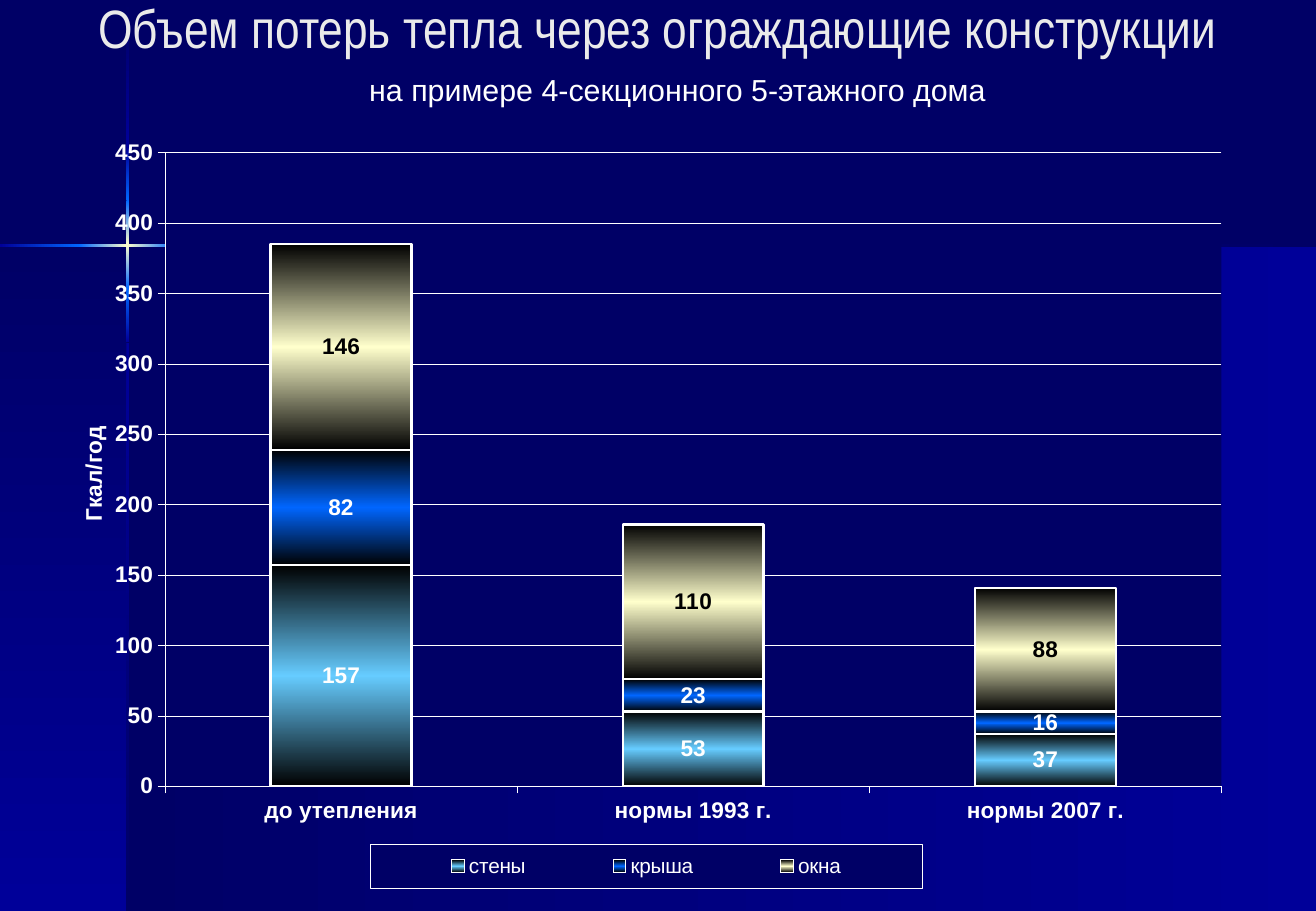
from copy import deepcopy
from lxml import etree
from pptx import Presentation, util as u
from pptx.chart import data as cd
from pptx.dml.color import RGBColor
from pptx.enum import chart as ce, shapes, text
from pptx.oxml import ns, parse_xml

theme = {
    "navy": RGBColor.from_string("000066"),
    "deep": RGBColor.from_string("000099"),
    "blue": RGBColor.from_string("0066FF"),
    "sky": RGBColor.from_string("66CCFF"),
    "cream": RGBColor.from_string("FFFFCC"),
    "white": RGBColor.from_string("FFFFFF"),
    "grey": RGBColor.from_string("EAEAEA"),
    "black": RGBColor.from_string("000000"),
    "head": u.Pt(32),
    "sub": u.Pt(18),
    "mark": u.Pt(13.4),
    "key": u.Pt(12.3),
    "thin": u.Pt(0.34),
    "edge": u.Pt(1.37),
    "sans": "Arial",
    "slim": "Arial Narrow",
}
px = u.Inches(1) // 100


def blend(fill, root, hues, angle):
    fill.gradient()
    fill.gradient_angle = angle
    stops = root.find(".//" + ns.qn("a:gsLst"))
    if len(hues) == 3:
        stops.append(deepcopy(stops[0]))
    for i, (stop, hue) in enumerate(zip(fill.gradient_stops, hues)):
        stop.position = i / (len(hues) - 1)
        stop.color.rgb = theme[hue]


def place(root, index, box):
    for old in root.findall(ns.qn("c:layout")):
        root.remove(old)
    layout = etree.Element(ns.qn("c:layout"))
    manual = etree.SubElement(layout, ns.qn("c:manualLayout"))
    if index == 0:
        etree.SubElement(manual, ns.qn("c:layoutTarget")).set("val", "inner")
    for tag in ("xMode", "yMode"):
        etree.SubElement(manual, ns.qn("c:" + tag)).set("val", "edge")
    for tag, size in zip("xywh", box):
        etree.SubElement(manual, ns.qn("c:" + tag)).set("val", str(size))
    root.insert(index, layout)


deck = Presentation()
deck.slide_width, deck.slide_height = 1083 * px, 750 * px
slide = deck.slides.add_slide(deck.slide_layouts[5])
slide.background.fill.solid()
slide.background.fill.fore_color.rgb = theme["navy"]

across, down = 0, 270
glow = ["blue", "cream", "blue"]
decor = [
    (105, 202, 978, 548, ["navy", "deep"], across),
    (0, 202, 105, 548, ["navy", "deep"], down),
    (104, 1, 2, 120, ["navy", "deep"], down),
    (104, 282, 2, 468, ["deep", "navy"], down),
    (192, 201, 891, 2, ["deep", "navy"], across),
    (104, 238, 2, 44, ["blue", "deep"], down),
    (104, 121, 2, 44, ["deep", "blue"], down),
    (104, 165, 2, 73, glow, down),
    (0, 201, 66, 2, ["deep", "blue"], across),
    (144, 201, 48, 2, ["blue", "deep"], across),
    (65, 201, 79, 2, glow, across),
]
for x, y, w, h, hues, angle in decor:
    bar = slide.shapes.add_shape(shapes.MSO_SHAPE.RECTANGLE, x * px, y * px, w * px, h * px)
    bar.shadow.inherit = False
    bar.line.fill.background()
    blend(bar.fill, bar._element, hues, angle)

title = slide.shapes.title
title._element.getparent().append(title._element)
title.left, title.top, title.width, title.height = 69 * px, 0, 945 * px, 54 * px
title.text_frame.text = "Объем потерь тепла через ограждающие конструкции"
title.text_frame.vertical_anchor = text.MSO_ANCHOR.MIDDLE
title.text_frame.auto_size = text.MSO_AUTO_SIZE.NONE
head = title.text_frame.paragraphs[0]
head.alignment = text.PP_ALIGN.CENTER
head.line_spacing = 0.8
head.font.name, head.font.size = theme["slim"], theme["head"]
head.font.color.rgb = theme["grey"]

data = cd.CategoryChartData()
data.categories = ["до утепления", "нормы 1993 г.", "нормы 2007 г."]
parts = [
    ("стены", (157, 53, 37), "sky", "white"),
    ("крыша", (82, 23, 16), "blue", "white"),
    ("окна", (146, 110, 88), "cream", "black"),
]
for name, vals, hue, ink in parts:
    data.add_series(name, vals)
chart = slide.shapes.add_chart(
    ce.XL_CHART_TYPE.COLUMN_STACKED, 38 * px, 96 * px, 978 * px, 648 * px, data
).chart
chart.has_title = False
chart.font.name, chart.font.size = theme["sans"], theme["mark"]
chart.font.color.rgb = theme["white"]

plot = chart.plots[0]
plot.gap_width, plot.overlap, plot.vary_by_categories = 150, 100, False
for series, (name, vals, hue, ink) in zip(plot.series, parts):
    blend(series.format.fill, series._element, ["black", hue, "black"], down)
    series.format.line.color.rgb = theme["white"]
    series.format.line.width = theme["edge"]
    labels = series.data_labels
    labels.show_value = True
    labels.position = ce.XL_LABEL_POSITION.CENTER
    labels.font.name, labels.font.size = theme["sans"], theme["mark"]
    labels.font.bold = True
    labels.font.color.rgb = theme[ink]

value = chart.value_axis
value.minimum_scale, value.maximum_scale, value.major_unit = 0, 450, 50
value.has_major_gridlines = True
value.has_title = True
value.axis_title.text_frame.text = "Гкал/год"
name = value.axis_title.text_frame.paragraphs[0]
value.axis_title.text_frame._txBody.bodyPr.set("rot", "-5400000")
value.axis_title.text_frame._txBody.bodyPr.set("vert", "horz")
for axis in (value, chart.category_axis):
    axis.major_tick_mark = ce.XL_TICK_MARK.OUTSIDE
    axis.minor_tick_mark = ce.XL_TICK_MARK.NONE
for font in (value.tick_labels.font, chart.category_axis.tick_labels.font, name.font):
    font.name, font.size, font.bold = theme["sans"], theme["mark"], True
    font.color.rgb = theme["white"]
for part in (value, chart.category_axis, value.major_gridlines):
    part.format.line.color.rgb = theme["white"]
    part.format.line.width = theme["thin"]

chart.has_legend = True
legend = chart.legend
legend.position = ce.XL_LEGEND_POSITION.BOTTOM
legend.include_in_layout = False
legend.font.name, legend.font.size = theme["sans"], theme["key"]
legend.font.color.rgb = theme["white"]

area = chart._chartSpace.chart.plotArea
place(area, 0, (0.1, 0.046, 0.889, 0.805))
place(value.axis_title._element, 1, (0.024, 0.388))
place(legend._element, 1, (0.273, 0.925, 0.464, 0.055))
solid = f'<a:solidFill><a:srgbClr val="{theme["navy"]}"/></a:solidFill>'
edge = f'<a:ln w="{theme["thin"]}"><a:solidFill><a:srgbClr val="{theme["white"]}"/></a:solidFill></a:ln>'
frame = f'<c:spPr {ns.nsdecls("c", "a")}>{solid}%s</c:spPr>'
area.append(parse_xml(frame % "<a:ln><a:noFill/></a:ln>"))
legend._element.find(ns.qn("c:txPr")).addprevious(parse_xml(frame % edge))

note = slide.shapes.add_textbox(294 * px, 54 * px, 672 * px, 40 * px).text_frame
note.word_wrap = True
note.text = "на примере 4-секционного 5-этажного дома"
sub = note.paragraphs[0]
sub.font.name, sub.font.size = theme["sans"], theme["sub"]
sub.font.color.rgb = theme["white"]

deck.save("out.pptx")
